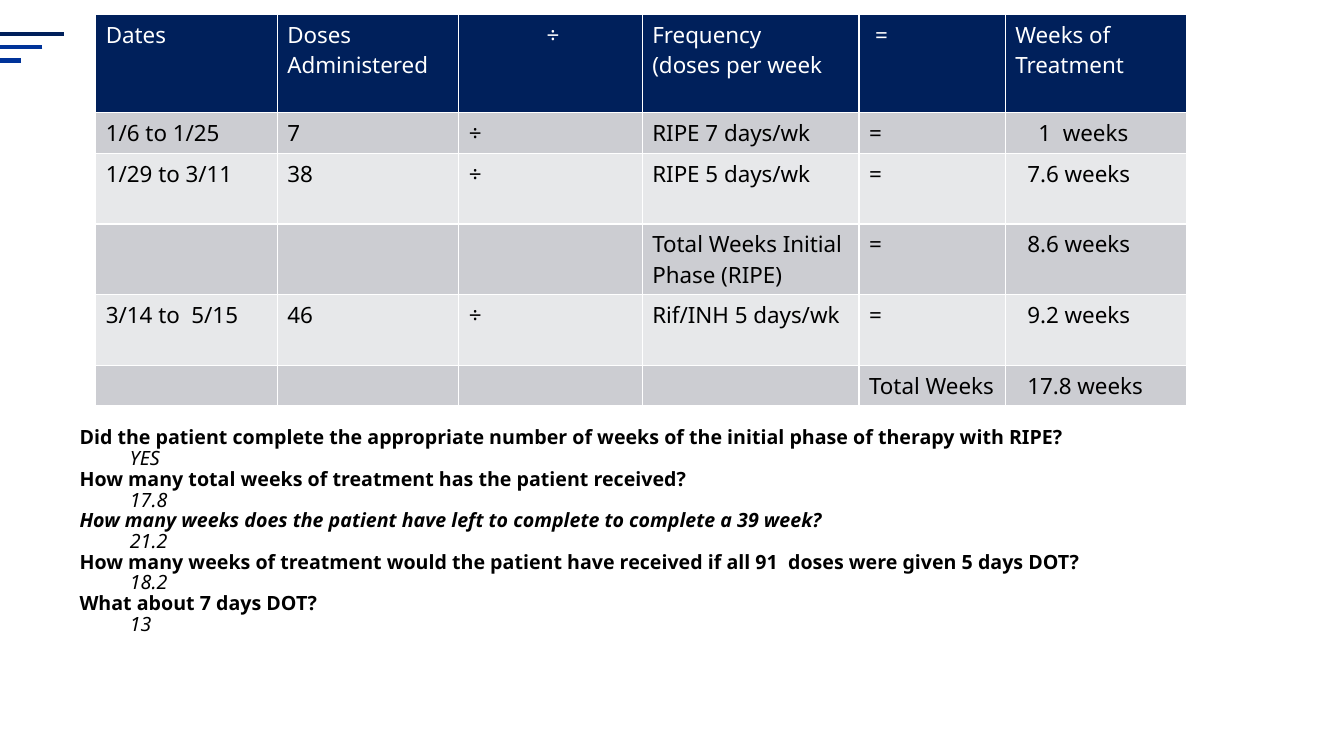
"""Build the treatment weeks slide with its dose table and review questions."""
from lxml import etree
from pptx import Presentation
from pptx import util as u
from pptx.dml.color import RGBColor
from pptx.enum import shapes, text
from pptx.oxml.ns import qn

NAVY = RGBColor(0x00, 0x20, 0x5B)
BLUE = RGBColor(0x00, 0x33, 0x99)
WHITE = RGBColor(0xFF, 0xFF, 0xFF)
BLACK = RGBColor(0x00, 0x00, 0x00)
DARK_BAND = RGBColor(0xCC, 0xCD, 0xD2)
LIGHT_BAND = RGBColor(0xE7, 0xE8, 0xEA)


def set_font(font, **values):
    color = values.pop("color", BLACK)
    for name, value in {"name": "Noto Sans", **values}.items():
        setattr(font, name, value)
    font.color.rgb = color


def add_borders(cell, color, width):
    properties = cell._tc.get_or_add_tcPr()
    for index, side in enumerate(("lnL", "lnR", "lnT", "lnB")):
        line = etree.Element(qn(f"a:{side}"), w=str(u.Pt(width)))
        fill = etree.SubElement(line, qn("a:solidFill"))
        etree.SubElement(fill, qn("a:srgbClr"), val=str(color))
        properties.insert(index, line)


presentation = Presentation()
presentation.slide_width = u.Inches(13.33)
presentation.slide_height = u.Inches(7.5)
slide = presentation.slides.add_slide(presentation.slide_layouts[6])

for index, color in enumerate((NAVY, BLUE, BLUE)):
    y = u.Inches(0.34 + 0.13 * index)
    accent = slide.shapes.add_connector(
        shapes.MSO_CONNECTOR.STRAIGHT, u.Inches(0.63 - 0.21 * index), y, 0, y)
    accent.line.color.rgb = color
    accent.line.width = u.Pt(3)
    etree.SubElement(accent._element.spPr, qn("a:effectLst"))

rows = [
    ("Dates", "Doses Administered", "÷", "Frequency\n(doses per week", "=", "Weeks of Treatment"),
    ("1/6 to 1/25", "7", "÷", "RIPE 7 days/wk", "=", "1  weeks"),
    ("1/29 to 3/11", "38", "÷", "RIPE 5 days/wk", "=", "7.6 weeks"),
    ("", "", "", "Total Weeks Initial Phase (RIPE)", "=", "8.6 weeks"),
    ("3/14 to  5/15", "46", "÷", "Rif/INH 5 days/wk", "=", "9.2 weeks"),
    ("", "", "", "", "Total Weeks", "17.8 weeks"),
]
column_widths = (1.8, 1.8, 1.82, 2.15, 1.45, 1.8)
row_heights = (0.98, 0.4, 0.7, 0.7, 0.7, 0.4)
extra_indents = {(0, 4): 0.06, (1, 5): 0.23, **{(row, 5): 0.12 for row in range(2, 6)}}

table = slide.shapes.add_table(
    len(rows), len(column_widths), u.Inches(0.95), u.Inches(0.14),
    u.Inches(sum(column_widths)), u.Inches(sum(row_heights))).table
for column, width in zip(table.columns, column_widths):
    column.width = u.Inches(width)
for row, height in zip(table.rows, row_heights):
    row.height = u.Inches(height)

for row_index, row_texts in enumerate(rows):
    is_header = row_index == 0
    band = NAVY if is_header else (LIGHT_BAND, DARK_BAND)[row_index % 2]
    for column_index, cell_text in enumerate(row_texts):
        cell = table.cell(row_index, column_index)
        cell.text = cell_text
        cell.margin_left = u.Inches(0.1 + extra_indents.get((row_index, column_index), 0))
        cell.margin_right = u.Inches(0.05)
        cell.fill.solid()
        cell.fill.fore_color.rgb = band
        add_borders(cell, WHITE, 1)
        for paragraph in cell.text_frame.paragraphs:
            for run in paragraph.runs:
                set_font(run.font, size=u.Pt(16), bold=False,
                         color=WHITE if is_header else BLACK)
            if not paragraph.runs:
                etree.SubElement(paragraph._p, qn("a:endParaRPr"), sz="1600")
table.cell(0, 2).text_frame.paragraphs[0].alignment = text.PP_ALIGN.CENTER

questions = [
    ("Did the patient complete the appropriate number of weeks of the initial phase of therapy with RIPE?", "YES", False),
    ("How many total weeks of treatment has the patient received?", "17.8", False),
    ("How many weeks does the patient have left to complete to complete a 39 week?", "21.2", True),
    ("How many weeks of treatment would the patient have received if all 91  doses were given 5 days DOT?", "18.2", False),
    ("What about 7 days DOT?", "13", False),
]
question_box = slide.shapes.add_textbox(
    u.Inches(0.69), u.Inches(4.2), u.Inches(12.29), u.Inches(2.69))
frame = question_box.text_frame
frame.word_wrap = True
frame.text = "\n".join(line for question, answer, _ in questions for line in (question, answer))
for index, paragraph in enumerate(frame.paragraphs):
    is_answer = index % 2 == 1
    paragraph.line_spacing = 0.88
    if is_answer:
        paragraph._p.get_or_add_pPr().set("marL", str(u.Inches(0.5)))
    set_font(paragraph.runs[0].font, size=u.Pt(14), bold=not is_answer,
             italic=is_answer or questions[index // 2][2])

presentation.save("out.pptx")
